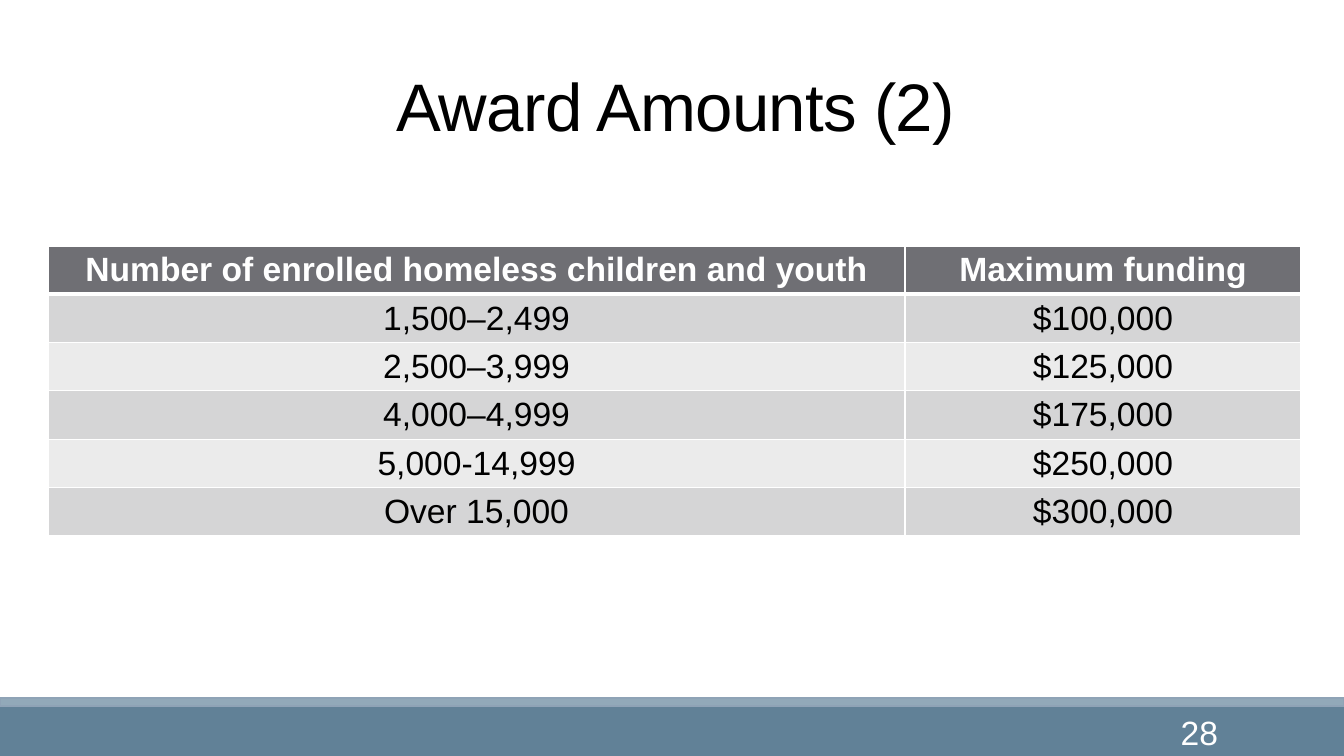
"""Build the Award Amounts slide with its funding table."""
from dataclasses import dataclass

from lxml.etree import SubElement
from pptx import Presentation
from pptx.dml.color import RGBColor
from pptx.enum.shapes import MSO_SHAPE
from pptx.enum.text import MSO_ANCHOR, PP_ALIGN
from pptx.oxml.ns import qn
from pptx.util import Emu, Pt


@dataclass(frozen=True)
class Theme:
    font: str = "Arial"
    title_size: int = 48
    body_size: int = 24
    black: str = "000000"
    white: str = "FFFFFF"
    footer: str = "618197"
    stripe: str = "92A9B9"
    stripe_line: str = "8FA3B6"
    header: str = "6F6F74"
    bands: tuple = ("D5D5D6", "EBEBEB")


theme = Theme()
SLIDE_WIDTH, SLIDE_HEIGHT = 1344, 756
SCALE = 12192000 / SLIDE_WIDTH


def px(*lengths):
    return [Emu(round(length * SCALE)) for length in lengths]


def write(text_frame, text, size, color, alignment, bold=False):
    text_frame.word_wrap = True
    text_frame.vertical_anchor = MSO_ANCHOR.MIDDLE
    paragraph = text_frame.paragraphs[0]
    paragraph.text = text
    paragraph.alignment = alignment
    paragraph.font.name = theme.font
    paragraph.font.size = Pt(size)
    paragraph.font.bold = bold
    paragraph.font.color.rgb = RGBColor.from_string(color)
    return paragraph


presentation = Presentation()
presentation.slide_width, presentation.slide_height = px(SLIDE_WIDTH, SLIDE_HEIGHT)
slide = presentation.slides.add_slide(presentation.slide_layouts[6])

for top, height, fill, line in (
    (707, 49, theme.footer, None),
    (698, 8, theme.stripe, theme.stripe_line),
):
    bar = slide.shapes.add_shape(MSO_SHAPE.RECTANGLE, *px(0, top, SLIDE_WIDTH, height))
    bar.shadow.inherit = False
    bar.fill.solid()
    bar.fill.fore_color.rgb = RGBColor.from_string(fill)
    if line:
        bar.line.color.rgb = RGBColor.from_string(line)
        bar.line.width = Pt(1.25)
    else:
        bar.line.fill.background()

title = slide.shapes.add_textbox(*px(121, 31, 1109, 160))
title_paragraph = write(title.text_frame, "Award Amounts (2)", theme.title_size,
                        theme.black, PP_ALIGN.CENTER)
title_paragraph.line_spacing = 0.85
for run in title_paragraph.runs:
    run.font._element.set("spc", "-50")

awards = (
    ("Number of enrolled homeless children and youth", "Maximum funding"),
    ("1,500–2,499", "$100,000"),
    ("2,500–3,999", "$125,000"),
    ("4,000–4,999", "$175,000"),
    ("5,000-14,999", "$250,000"),
    ("Over 15,000", "$300,000"),
)
column_widths = px(857, 396)
table = slide.shapes.add_table(len(awards), len(column_widths),
                               *px(48, 246, 1253, 285)).table
for column, width in zip(table.columns, column_widths):
    column.width = width

for row_index, award in enumerate(awards):
    is_header = row_index == 0
    fill = theme.header if is_header else theme.bands[(row_index - 1) % 2]
    for column_index, text in enumerate(award):
        cell = table.cell(row_index, column_index)
        cell.margin_top, cell.margin_bottom = px(4, 4)
        cell.vertical_anchor = MSO_ANCHOR.MIDDLE
        write(cell.text_frame, text, theme.body_size,
              theme.white if is_header else theme.black, PP_ALIGN.CENTER, is_header)
        properties = cell._tc.get_or_add_tcPr()
        for side in ("L", "R", "T", "B"):
            thick = (is_header and side == "B") or (row_index == 1 and side == "T")
            border = SubElement(properties, qn(f"a:ln{side}"), w=str(Pt(3 if thick else 1)))
            border_fill = SubElement(border, qn("a:solidFill"))
            SubElement(border_fill, qn("a:srgbClr"), val=theme.white)
        cell.fill.solid()
        cell.fill.fore_color.rgb = RGBColor.from_string(fill)

page_number = slide.shapes.add_textbox(*px(1084, 712, 144, 40))
write(page_number.text_frame, "28", theme.body_size, theme.white, PP_ALIGN.RIGHT)

presentation.save("out.pptx")
